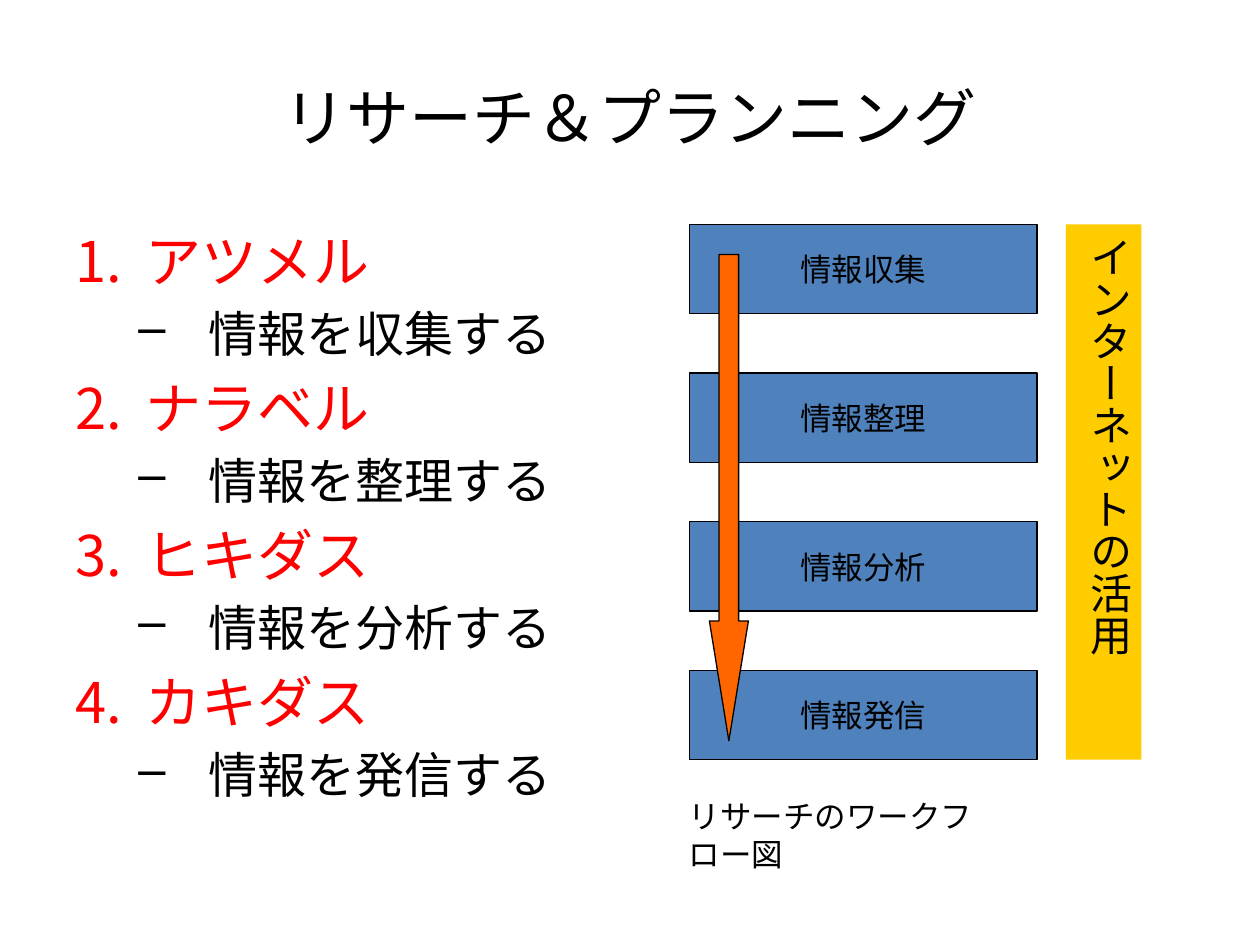
from lxml import etree
from pptx import Presentation, util as u
from pptx.dml.color import RGBColor
from pptx.enum import shapes, text
from pptx.oxml.ns import qn

TITLE = "リサーチ＆プランニング"
STEPS = [  # keyword, what it means, workflow box
    ("アツメル", "情報を収集する", "情報収集"),
    ("ナラベル", "情報を整理する", "情報整理"),
    ("ヒキダス", "情報を分析する", "情報分析"),
    ("カキダス", "情報を発信する", "情報発信"),
]
SIDE_BAR = "インターネットの活用"
CAPTION = "リサーチのワークフロー図"

THEME = {
    "font": "Calibri", "ink": "000000", "accent": "FF0000",
    "step": "4F81BD", "arrow": "FF6600", "bar": "FFCC00",
    "title": 36, "keyword": 32, "detail": 28, "side": 24, "label": 18,
}
WIDTH, HEIGHT, MARGIN = 10, 7.5, 0.5
FLOW_LEFT, FLOW_TOP, FLOW_WIDTH = 5.47, 1.78, 2.76
ROW, PITCH = 0.71, 1.18
FLOW_HEIGHT = PITCH * (len(STEPS) - 1) + ROW

LEVELS = [  # one format per outline level
    {"size": "keyword", "color": "accent", "left": 0.56,
     "bullet": ("a:buAutoNum", {"type": "arabicPeriod"})},
    {"size": "detail", "color": "ink", "left": 1.06,
     "bullet": ("a:buChar", {"char": "–"})},
]
HANGING = 0.56


def color(name):
    return RGBColor.from_string(THEME[name])


def add_span(para, words, size, ink="ink"):
    span = para.add_run()
    span.text = words
    for name, value in {"name": THEME["font"], "size": u.Pt(THEME[size])}.items():
        setattr(span.font, name, value)
    span.font.color.rgb = color(ink)


def write(shape, words, size, align=text.PP_ALIGN.LEFT, **frame_format):
    frame = shape.text_frame
    for name, value in {"word_wrap": True, **frame_format}.items():
        setattr(frame, name, value)
    para = frame.paragraphs[0]
    para.alignment = align
    add_span(para, words, size)


def add_box(page, *place):
    return page.shapes.add_textbox(*map(u.Inches, place))


def add_block(page, kind, fill, *place, outlined=True):
    block = page.shapes.add_shape(kind, *map(u.Inches, place))
    block.shadow.inherit = False
    block.fill.solid()
    block.fill.fore_color.rgb = color(fill)
    if outlined:
        block.line.color.rgb = color("ink")
        block.line.width = u.Pt(0.75)
    else:
        block.line.fill.background()
    return block


def add_outline(page):
    frame = add_box(page, MARGIN, 1.75, 4.58, 4.95).text_frame
    frame.word_wrap = True
    lines = [(level, step[level]) for step in STEPS for level in range(len(LEVELS))]
    for index, (level, words) in enumerate(lines):
        style = LEVELS[level]
        para = frame.add_paragraph() if index else frame.paragraphs[0]
        para.level = level
        properties = para._p.get_or_add_pPr()
        properties.set("marL", str(u.Inches(style["left"])))
        properties.set("indent", str(-u.Inches(HANGING)))
        tag, attributes = style["bullet"]
        etree.SubElement(properties, qn(tag), attributes)
        if index:
            para.space_before = u.Pt(THEME[style["size"]] * 0.2)
        add_span(para, words, style["size"], style["color"])


def add_workflow(page):
    rectangle = shapes.MSO_SHAPE.RECTANGLE
    for index, (_, _, label) in enumerate(STEPS):
        step = add_block(page, rectangle, "step",
                         FLOW_LEFT, FLOW_TOP + index * PITCH, FLOW_WIDTH, ROW)
        write(step, label, "label", text.PP_ALIGN.CENTER, word_wrap=False,
              vertical_anchor=text.MSO_ANCHOR.MIDDLE)
    arrow = add_block(page, shapes.MSO_SHAPE.DOWN_ARROW, "arrow",
                      FLOW_LEFT + 0.16, FLOW_TOP + 0.24, 0.31, 3.86)
    arrow.adjustments[0], arrow.adjustments[1] = 0.5, 3.07
    write(add_box(page, FLOW_LEFT - 0.1, FLOW_TOP + FLOW_HEIGHT + 0.25, 2.5, 0.7),
          CAPTION, "label")
    bar = add_block(page, rectangle, "bar", 8.46, FLOW_TOP, 0.6, FLOW_HEIGHT,
                    outlined=False)
    write(bar, SIDE_BAR, "side", vertical_anchor=text.MSO_ANCHOR.TOP)
    bar.text_frame._txBody.bodyPr.set("vert", "eaVert")


def main():
    deck = Presentation()
    deck.slide_width, deck.slide_height = u.Inches(WIDTH), u.Inches(HEIGHT)
    page = deck.slides.add_slide(deck.slide_layouts[6])
    write(add_box(page, MARGIN, 0.3, WIDTH - 2 * MARGIN, 1.25), TITLE, "title",
          text.PP_ALIGN.CENTER, vertical_anchor=text.MSO_ANCHOR.MIDDLE)
    add_outline(page)
    add_workflow(page)
    deck.save("out.pptx")


if __name__ == "__main__":
    main()
